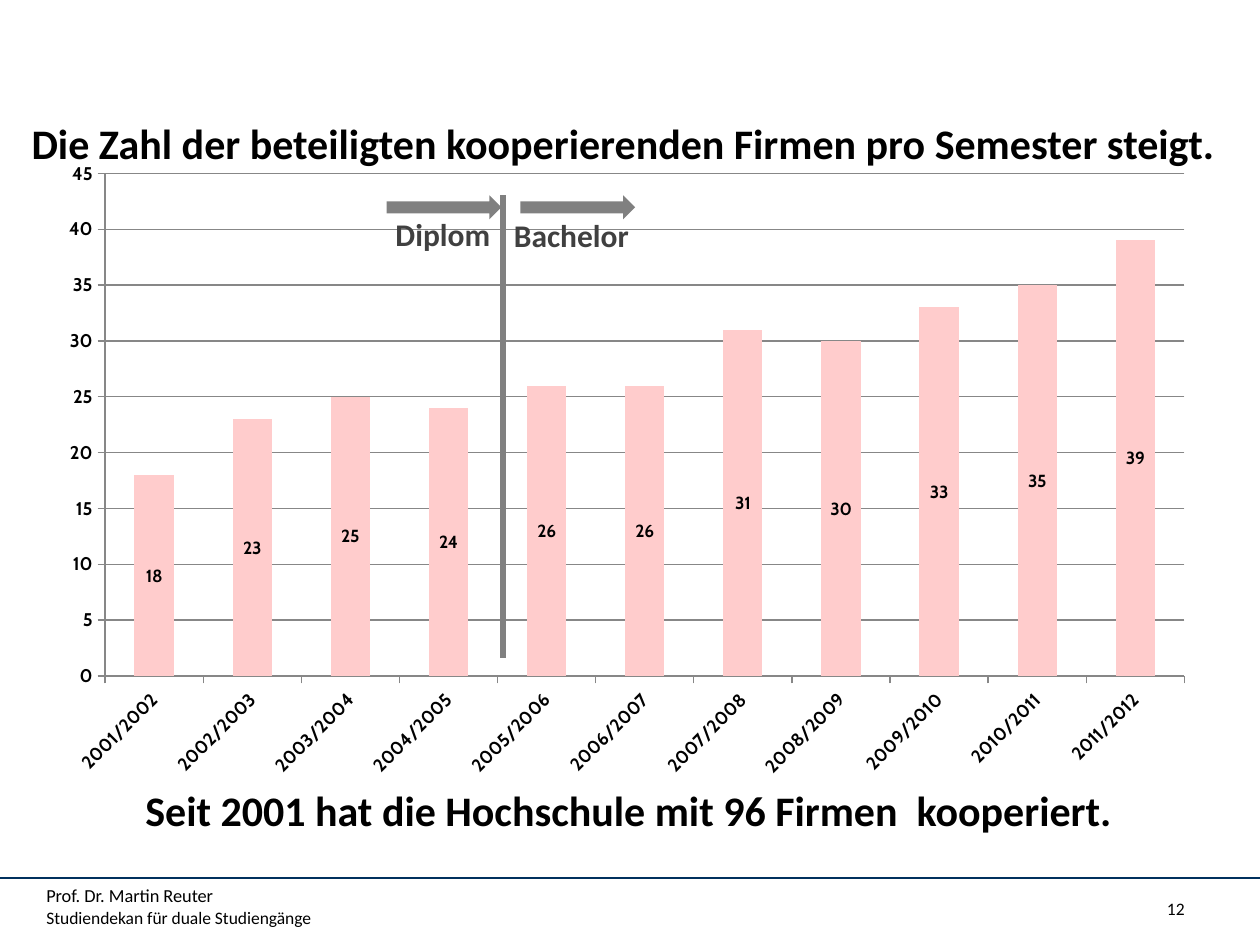
from lxml import etree
from pptx import Presentation
from pptx.chart.data import CategoryChartData
from pptx.dml.color import RGBColor
from pptx.enum.chart import XL_CHART_TYPE, XL_LABEL_POSITION, XL_TICK_MARK
from pptx.enum.shapes import MSO_CONNECTOR, MSO_SHAPE
from pptx.enum.text import MSO_ANCHOR, MSO_AUTO_SIZE, PP_ALIGN
from pptx.oxml import parse_xml
from pptx.oxml.ns import nsdecls, qn
from pptx.util import Pt

STACKED = XL_CHART_TYPE.COLUMN_STACKED
STRAIGHT = MSO_CONNECTOR.STRAIGHT
ARROW = MSO_SHAPE.RIGHT_ARROW
LEFT, CENTER, RIGHT = PP_ALIGN.LEFT, PP_ALIGN.CENTER, PP_ALIGN.RIGHT
OUTSIDE, NO_TICK = XL_TICK_MARK.OUTSIDE, XL_TICK_MARK.NONE

COLORS = {"text": "000000", "label": "404040", "marker": "808080",
          "rule": "00305D", "bar": "FFCCCC", "axis": "878787"}


def color(name):
    return RGBColor.from_string(COLORS[name])


def write(box, lines, size, bold=False, align=LEFT, name="text", anchor=MSO_ANCHOR.TOP):
    """Fill a box with one paragraph whose lines are separated by breaks."""
    frame = box.text_frame
    frame.word_wrap = True
    frame.auto_size = MSO_AUTO_SIZE.NONE
    frame.vertical_anchor = anchor
    para = frame.paragraphs[0]
    para.alignment = align
    for index, line in enumerate(lines):
        if index:
            para.add_line_break()
        span = para.add_run()
        span.text = line
        span.font.name = "Calibri"
        span.font.size = Pt(size)
        span.font.bold = bold
        span.font.color.rgb = color(name)


deck = Presentation()
deck.slide_width, deck.slide_height = Pt(720), Pt(540)
page = deck.slides.add_slide(deck.slide_layouts[5])
shapes = page.shapes

# Title
title = shapes.title
title.left, title.top, title.width, title.height = Pt(10.8), Pt(63.4), Pt(700), Pt(36.7)
write(title, ["Die Zahl der beteiligten kooperierenden Firmen pro Semester steigt."], 24, True)

# Footer
number = shapes.add_textbox(Pt(552), Pt(510), Pt(132), Pt(18))
write(number, ["12"], 10, align=RIGHT, anchor=MSO_ANCHOR.MIDDLE)
author = shapes.add_textbox(Pt(19.4), Pt(502), Pt(482), Pt(28))
write(author, ["Prof. Dr. Martin Reuter", "Studiendekan für duale Studiengänge"], 10)
author.text_frame.paragraphs[0].runs[0].font.size = Pt(10.5)

# Companies per academic year
data = CategoryChartData()
data.categories = [f"{year}/{year + 1}" for year in range(2001, 2012)]
data.add_series("Firmen", [18, 23, 25, 24, 26, 26, 31, 30, 33, 35, 39])
chart = shapes.add_chart(STACKED, Pt(26.6), Pt(77.8), Pt(669), Pt(374.4), data).chart
chart.has_title = False
chart.has_legend = False
chart.font.name = "Cabin"
chart.font.size = Pt(10)
chart.font.color.rgb = color("text")

plot = chart.plots[0]
plot.gap_width, plot.overlap = 150, 100
plot.vary_by_categories = False
bars = plot.series[0]
bars.format.fill.solid()
bars.format.fill.fore_color.rgb = color("bar")
labels = bars.data_labels
labels.show_value = True
labels.position = XL_LABEL_POSITION.CENTER
labels.font.size = Pt(10)
labels.font.bold = True

years, counts = chart.category_axis, chart.value_axis
for axis in (years, counts):
    axis.major_tick_mark, axis.minor_tick_mark = OUTSIDE, NO_TICK
    axis.tick_labels.font.size = Pt(10.5)
    axis.tick_labels.font.bold = True
    axis.format.line.color.rgb = color("axis")
    axis.format.line.width = Pt(0.75)
counts.minimum_scale, counts.maximum_scale, counts.major_unit = 0, 45, 5
counts.has_major_gridlines = True
counts.major_gridlines.format.line.color.rgb = color("axis")
counts.major_gridlines.format.line.width = Pt(0.75)
years._element.find(qn("c:txPr")).find(qn("a:bodyPr")).set("rot", "-2700000")

# Fixed inner plot area
area = chart._chartSpace.chart.plotArea
for layout in area.findall(qn("c:layout")):
    area.remove(layout)
modes = '<c:layoutTarget val="inner"/><c:xMode val="edge"/><c:yMode val="edge"/>'
sizes = '<c:x val="0.05"/><c:y val="0.057"/><c:w val="0.922"/><c:h val="0.767"/>'
area.insert(0, parse_xml(
    f'<c:layout {nsdecls("c")}><c:manualLayout>{modes}{sizes}</c:manualLayout></c:layout>'))

# Summary below the chart
summary = shapes.add_textbox(Pt(42.5), Pt(445), Pt(633.6), Pt(36.7))
write(summary, ["Seit 2001 hat die Hochschule mit 96 Firmen  kooperiert."], 24, True, CENTER)

# Footer rule and divider between the degree types
for x1, y1, x2, y2, name, width in [(0, 501.8, 720, 501.8, "rule", 0.75),
                                    (287.5, 375.8, 287.5, 111.6, "marker", 3)]:
    line = shapes.add_connector(STRAIGHT, Pt(x1), Pt(y1), Pt(x2), Pt(y2))
    line.line.color.rgb = color(name)
    line.line.width = Pt(width)
    etree.SubElement(line._element.spPr, qn("a:effectLst"))

# Degree arrows with their labels
for degree, arrow_left, label_left, label_top, label_width in [
        ("Diplom", 221, 218.9, 119.5, 71.3), ("Bachelor", 297.4, 286.6, 120.2, 83.5)]:
    arrow = shapes.add_shape(ARROW, Pt(arrow_left), Pt(111.6), Pt(65.5), Pt(13.7))
    arrow.shadow.inherit = False
    arrow.fill.solid()
    arrow.fill.fore_color.rgb = color("marker")
    arrow.line.fill.background()
    label = shapes.add_textbox(Pt(label_left), Pt(label_top), Pt(label_width), Pt(28.8))
    write(label, [degree], 18, True, name="label")

deck.save("out.pptx")
